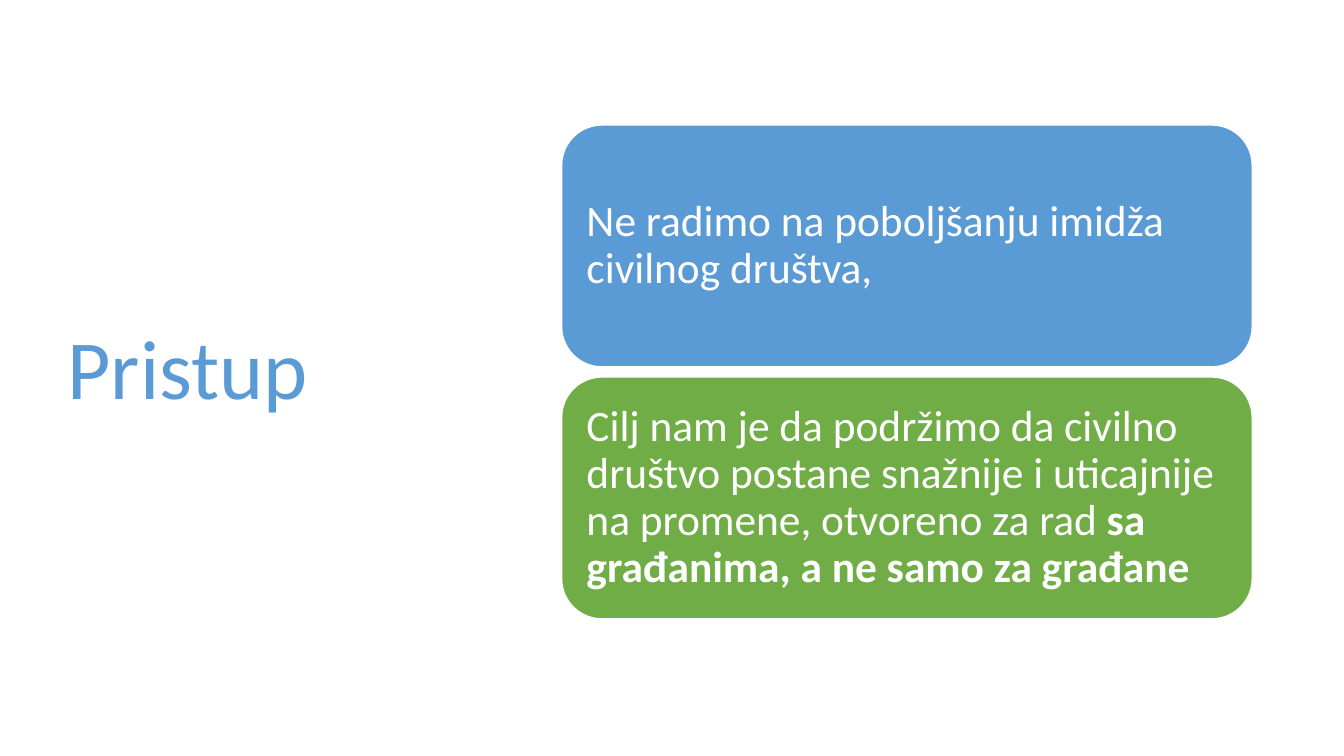
from pptx import Presentation
from pptx.dml.color import RGBColor
from pptx.enum.shapes import MSO_SHAPE
from pptx.enum.text import MSO_ANCHOR, MSO_AUTO_SIZE, PP_ALIGN
from pptx.util import Inches, Pt

BLUE = RGBColor(0x5B, 0x9B, 0xD5)
GREEN = RGBColor(0x70, 0xAD, 0x47)
WHITE = RGBColor(0xFF, 0xFF, 0xFF)
FONT = "Calibri"

CARD_TOP = 1.24
CARD_PITCH = 2.5
CARDS = [
    (BLUE, [("Ne radimo na poboljšanju imidža civilnog društva,", False)]),
    (GREEN, [
        ("Cilj nam je da podržimo da civilno društvo postane snažnije "
         "i uticajnije na promene, otvoreno za rad ", False),
        ("sa građanima, a ne samo za građane", True),
    ]),
]


def format_paragraph(para, size, color):
    para.alignment = PP_ALIGN.LEFT
    para.line_spacing = 0.9
    for span in para.runs:
        span.font.name = FONT
        span.font.size = Pt(size)
        span.font.color.rgb = color


def set_title(page, text):
    title = page.shapes.title
    title.left, title.top = Inches(0.57), Inches(0.68)
    title.width, title.height = Inches(4.16), Inches(6.02)
    frame = title.text_frame
    frame.text = text
    frame.word_wrap = True
    frame.auto_size = MSO_AUTO_SIZE.NONE
    frame.vertical_anchor = MSO_ANCHOR.MIDDLE
    format_paragraph(frame.paragraphs[0], 60, BLUE)


def add_card(page, top, fill, spans):
    """Add a rounded card whose text is a list of (words, bold) pairs."""
    card = page.shapes.add_shape(
        MSO_SHAPE.ROUNDED_RECTANGLE,
        Inches(5.57), Inches(top), Inches(6.85), Inches(2.4))
    card.shadow.inherit = False
    card.fill.solid()
    card.fill.fore_color.rgb = fill
    card.line.color.rgb = WHITE
    card.line.width = Pt(1)
    frame = card.text_frame
    frame.word_wrap = True
    frame.vertical_anchor = MSO_ANCHOR.MIDDLE
    frame.margin_left = frame.margin_right = Inches(0.13)
    frame.margin_top = frame.margin_bottom = Inches(0.13)
    para = frame.paragraphs[0]
    for words, bold in spans:
        span = para.add_run()
        span.text = words
        span.font.bold = bold
    format_paragraph(para, 31, WHITE)


def main():
    deck = Presentation()
    deck.slide_width, deck.slide_height = Inches(13.33), Inches(7.5)
    page = deck.slides.add_slide(deck.slide_layouts[5])
    set_title(page, "Pristup")
    for index, (fill, spans) in enumerate(CARDS):
        add_card(page, CARD_TOP + index * CARD_PITCH, fill, spans)
    deck.save("out.pptx")


if __name__ == "__main__":
    main()
